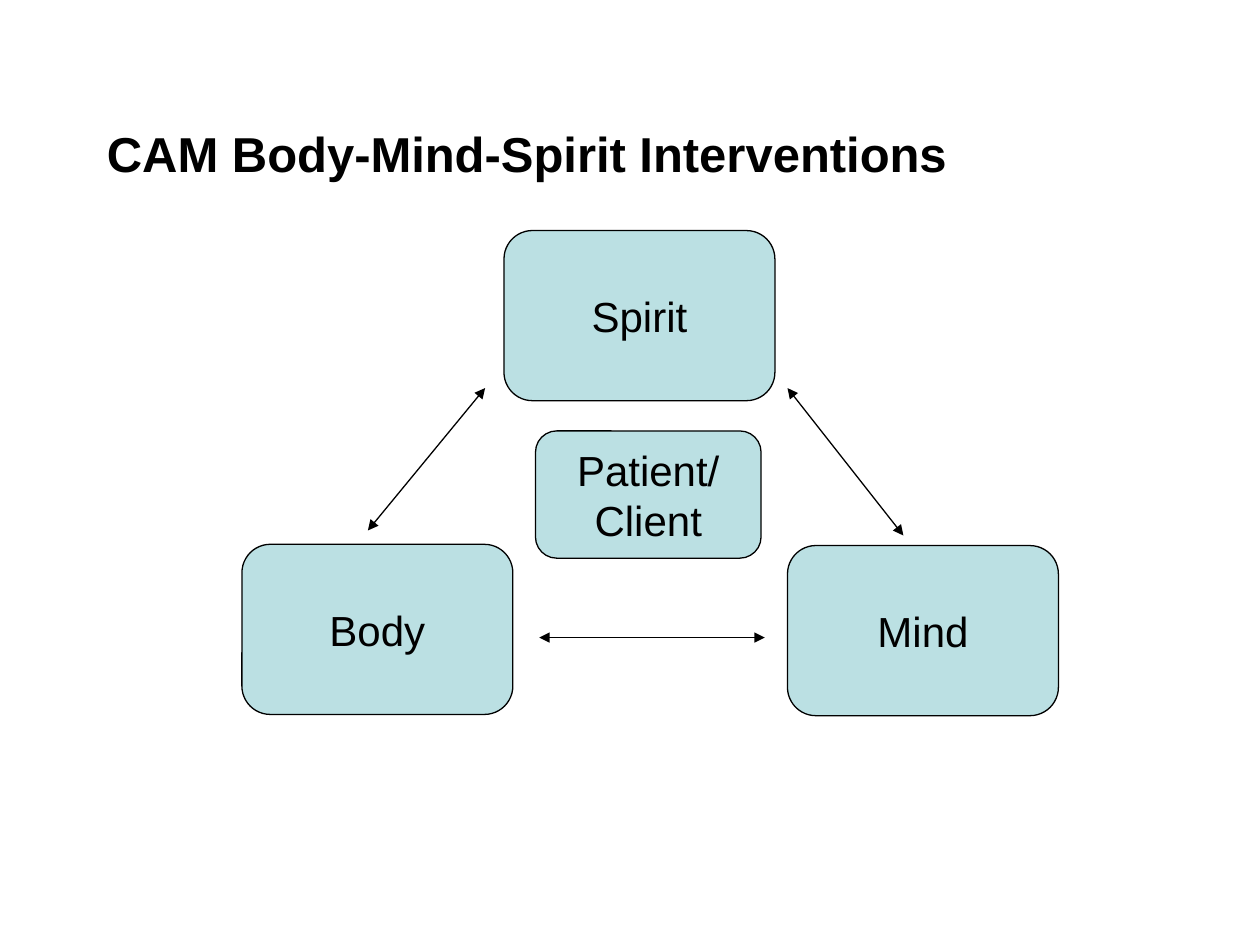
from dataclasses import dataclass

from lxml import etree
from pptx import Presentation
from pptx import util as u
from pptx.dml.color import RGBColor
from pptx.enum import shapes, text
from pptx.oxml.ns import qn


@dataclass(frozen=True)
class Theme:
    font: str = "Arial"
    ink: RGBColor = RGBColor(0x00, 0x00, 0x00)
    box_fill: RGBColor = RGBColor(0xBB, 0xE0, 0xE3)
    title_size: int = 28
    label_size: int = 24
    line_width: float = 0.75


THEME = Theme()
CORNER_SIZE = (2.15, 1.35)


def add_line(para, words, size, bold=False):
    span = para.add_run()
    span.text = words
    span.font.name = THEME.font
    span.font.size = u.Pt(size)
    span.font.bold = bold
    span.font.color.rgb = THEME.ink


def style_line(line):
    line.color.rgb = THEME.ink
    line.width = u.Pt(THEME.line_width)


def add_title(page, words):
    box = page.shapes.add_textbox(
        u.Inches(0.75), u.Inches(0.92), u.Inches(8.75), u.Inches(0.58))
    frame = box.text_frame
    frame.word_wrap = True
    frame.vertical_anchor = text.MSO_ANCHOR.MIDDLE
    add_line(frame.paragraphs[0], words, THEME.title_size, bold=True)


def add_box(page, lines, left, top, size=CORNER_SIZE):
    width, height = size
    box = page.shapes.add_shape(
        shapes.MSO_SHAPE.ROUNDED_RECTANGLE,
        u.Inches(left), u.Inches(top), u.Inches(width), u.Inches(height))
    box.shadow.inherit = False
    box.fill.solid()
    box.fill.fore_color.rgb = THEME.box_fill
    style_line(box.line)

    frame = box.text_frame
    frame.word_wrap = False
    frame.vertical_anchor = text.MSO_ANCHOR.MIDDLE
    for index, words in enumerate(lines):
        para = frame.add_paragraph() if index else frame.paragraphs[0]
        para.alignment = text.PP_ALIGN.CENTER
        add_line(para, words, THEME.label_size)


def add_double_arrow(page, start, end):
    arrow = page.shapes.add_connector(
        shapes.MSO_CONNECTOR.STRAIGHT,
        *(u.Inches(value) for value in start + end))
    style_line(arrow.line)
    outline = arrow.line._get_or_add_ln()
    for tag in ("a:headEnd", "a:tailEnd"):
        etree.SubElement(outline, qn(tag), type="triangle")
    etree.SubElement(arrow._element.spPr, qn("a:effectLst"))


def main():
    deck = Presentation()
    deck.slide_width, deck.slide_height = u.Inches(10), u.Inches(7.5)
    page = deck.slides.add_slide(deck.slide_layouts[6])

    add_title(page, "CAM Body-Mind-Spirit Interventions")

    # Patient at the centre of the triangle
    add_box(page, ["Patient/", "Client"], 4.25, 3.42, size=(1.79, 1.01))

    # Corners of the triangle
    add_box(page, ["Spirit"], 4, 1.83)
    add_box(page, ["Mind"], 6.25, 4.33)
    add_box(page, ["Body"], 1.92, 4.32)

    # Two-way links between the corners
    add_double_arrow(page, (7.17, 4.25), (6.25, 3.08))
    add_double_arrow(page, (4.28, 5.06), (6.07, 5.06))
    add_double_arrow(page, (2.92, 4.21), (3.85, 3.08))

    deck.save("out.pptx")


if __name__ == "__main__":
    main()
